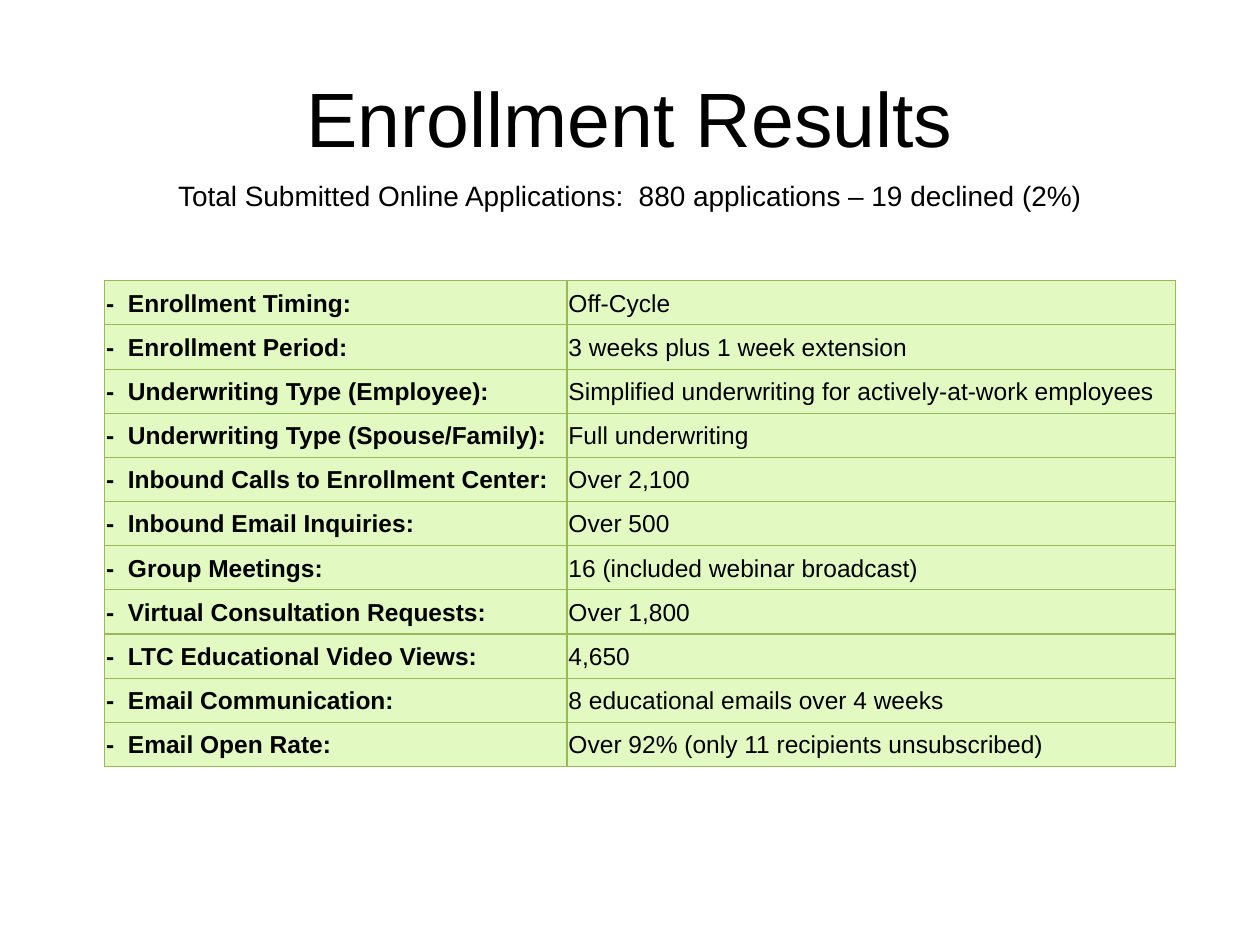
from dataclasses import dataclass

from lxml.etree import SubElement
from pptx import Presentation
from pptx.dml.color import RGBColor
from pptx.enum.text import MSO_ANCHOR, PP_ALIGN
from pptx.oxml.ns import qn
from pptx.util import Cm, Pt


@dataclass(frozen=True)
class Theme:
    font: str = "Arial"
    text: str = "000000"
    panel: str = "E2F9C1"
    grid: str = "98B955"
    blank: str = "FFFFFF"
    title_size: int = 44
    summary_size: int = 16
    table_size: int = 14


theme = Theme()


def format_paragraph(para, size, bold=False, align=PP_ALIGN.LEFT):
    para.alignment = align
    para.font.name = theme.font
    para.font.size = Pt(size)
    para.font.bold = bold
    para.font.color.rgb = RGBColor.from_string(theme.text)


def format_cell(cell, fill, border, width):
    cell.vertical_anchor = MSO_ANCHOR.MIDDLE
    cell.margin_left = cell.margin_right = cell.margin_top = Cm(0.03)
    cell.margin_bottom = 0
    # Borders come before the fill in the cell properties
    properties = cell._tc.get_or_add_tcPr()
    for side in ("a:lnL", "a:lnR", "a:lnT", "a:lnB"):
        line = SubElement(properties, qn(side), w=str(Pt(width)))
        paint = SubElement(line, qn("a:solidFill"))
        SubElement(paint, qn("a:srgbClr"), val=border)
    cell.fill.solid()
    cell.fill.fore_color.rgb = RGBColor.from_string(fill)


deck = Presentation()
deck.slide_width, deck.slide_height = Cm(25.4), Cm(19.05)
page = deck.slides.add_slide(deck.slide_layouts[5])

# Title
title = page.shapes.title
title.left, title.top, title.width, title.height = Cm(1.27), Cm(0.76), Cm(22.86), Cm(3.18)
title.text_frame.text = "Enrollment Results"
title.text_frame.vertical_anchor = MSO_ANCHOR.MIDDLE
format_paragraph(title.text_frame.paragraphs[0], theme.title_size, align=PP_ALIGN.CENTER)

# Summary line
summary = page.shapes.add_table(1, 1, Cm(3.39), Cm(3.6), Cm(18.62), Cm(0.7)).table
summary.first_row = summary.horz_banding = False
summary_cell = summary.cell(0, 0)
summary_cell.text = "Total Submitted Online Applications:  880 applications – 19 declined (2%)"
format_cell(summary_cell, theme.blank, theme.blank, 1)
format_paragraph(summary_cell.text_frame.paragraphs[0], theme.summary_size, align=PP_ALIGN.CENTER)

# Results table
results = [
    ("Enrollment Timing", "Off-Cycle"),
    ("Enrollment Period", "3 weeks plus 1 week extension"),
    ("Underwriting Type (Employee)", "Simplified underwriting for actively-at-work employees"),
    ("Underwriting Type (Spouse/Family)", "Full underwriting"),
    ("Inbound Calls to Enrollment Center", "Over 2,100"),
    ("Inbound Email Inquiries", "Over 500"),
    ("Group Meetings", "16 (included webinar broadcast)"),
    ("Virtual Consultation Requests", "Over 1,800"),
    ("LTC Educational Video Views", "4,650"),
    ("Email Communication", "8 educational emails over 4 weeks"),
    ("Email Open Rate", "Over 92% (only 11 recipients unsubscribed)"),
]
column_widths = [Cm(9.32), Cm(12.27)]
row_height = Cm(0.89)
table = page.shapes.add_table(
    len(results), len(column_widths), Cm(2.11), Cm(5.66),
    sum(column_widths), row_height * len(results),
).table
table.first_row = table.horz_banding = False
for column, width in zip(table.columns, column_widths):
    column.width = width
for row, (label, value) in zip(table.rows, results):
    row.height = row_height
    for index, words in enumerate((f"-  {label}:", value)):
        cell = row.cells[index]
        cell.text = words
        format_cell(cell, theme.panel, theme.grid, 0.75)
        format_paragraph(cell.text_frame.paragraphs[0], theme.table_size, bold=index == 0)

deck.save("out.pptx")
